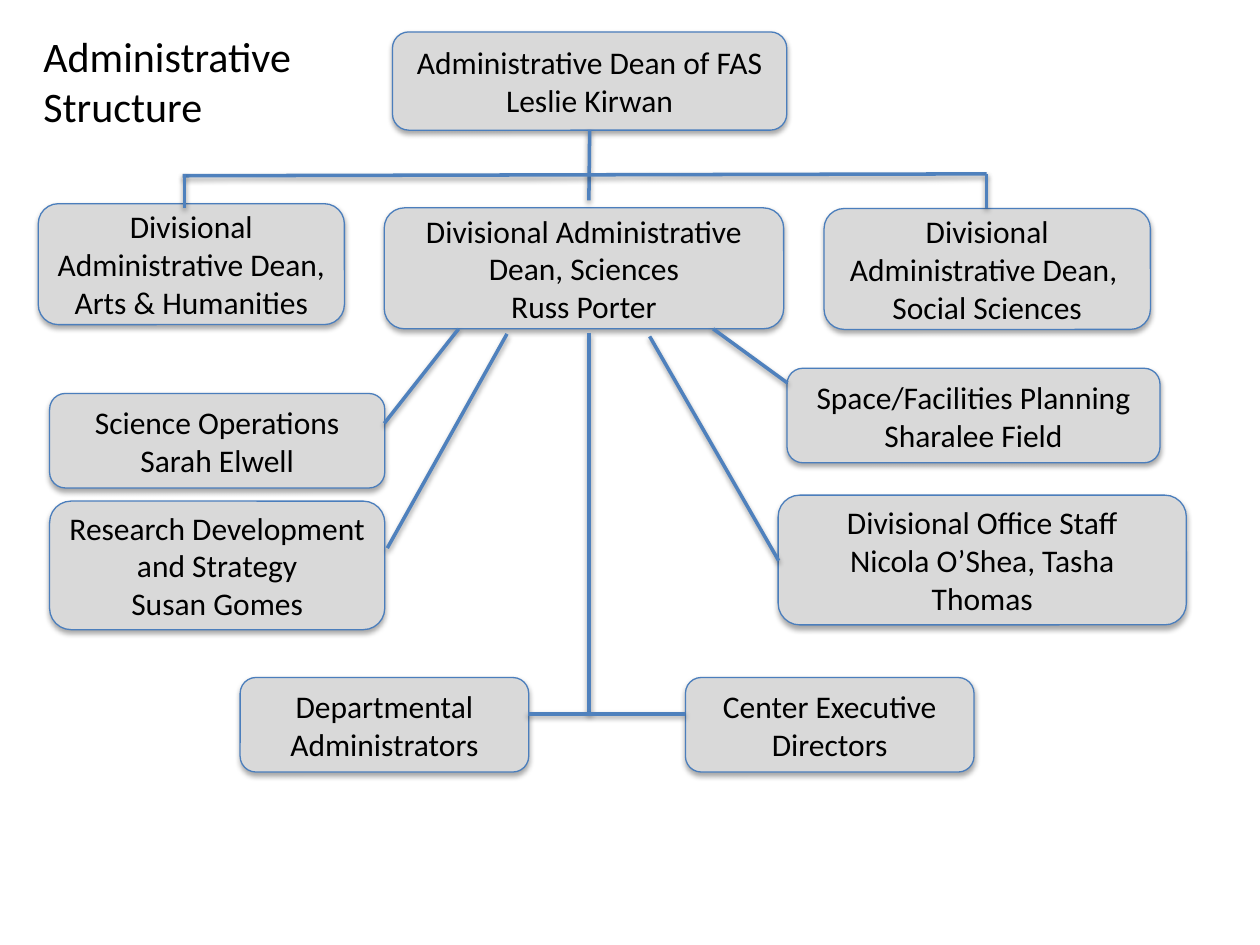
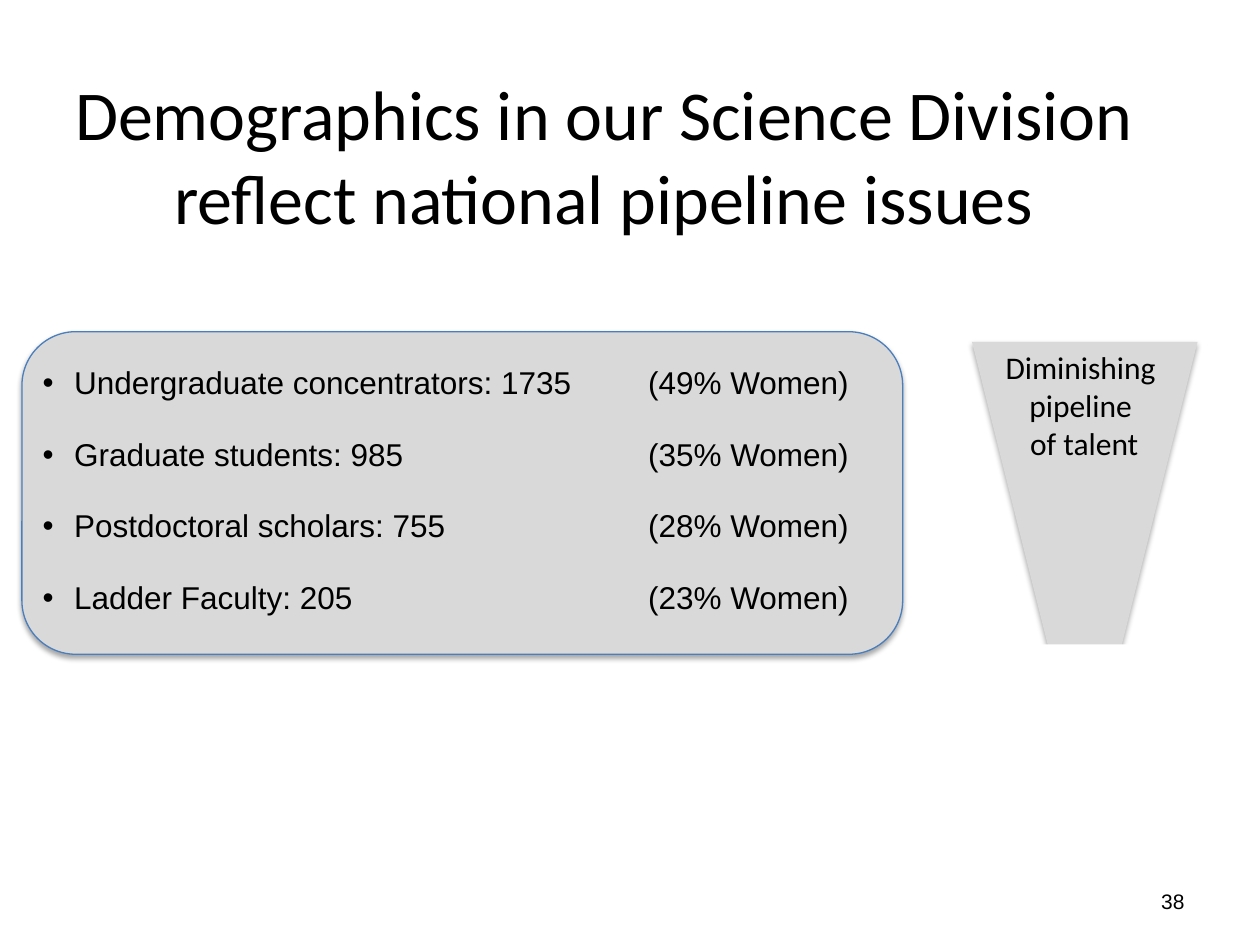
from pptx import Presentation
from pptx.dml.color import RGBColor
from pptx.enum.shapes import MSO_CONNECTOR as Link, MSO_SHAPE as Kind
from pptx.enum.text import MSO_ANCHOR as Anchor, MSO_AUTO_SIZE as Fit, PP_ALIGN as Align
from pptx.oxml import parse_xml
from pptx.oxml.ns import nsdecls
from pptx.util import Inches, Pt

WIDE, HIGH = Inches(10), Inches(7.5)
COLS, ROWS = 100, 75
BLACK = RGBColor(0x00, 0x00, 0x00)
WHITE = RGBColor(0xFF, 0xFF, 0xFF)
GREY = RGBColor(0xD9, 0xD9, 0xD9)
EDGE = RGBColor(0x4B, 0x7E, 0xBC)
BLUE = RGBColor(0x4F, 0x81, 0xBD)
SANS, ARIAL = "Calibri", "Arial"

# Left, top, width, height in grid cells, then the lines of text
POSTS = [
    (31.15, 2.53, 31.3, 7.8, ["Administrative Dean of FAS", "Leslie Kirwan"]),
    (3.04, 16.17, 24.3, 9.6, ["Divisional Administrative Dean, Arts & Humanities"]),
    (30.5, 16.5, 31.7, 9.6, ["Divisional Administrative Dean, Sciences", "Russ Porter"]),
    (65.4, 16.55, 25.9, 9.6, ["Divisional Administrative Dean, ", "Social Sciences"]),
    (3.94, 31.23, 26.6, 7.5, ["Science Operations", "Sarah Elwell"]),
    (3.94, 39.77, 26.6, 10.2, ["Research Development and Strategy", "Susan Gomes"]),
    (62.47, 29.23, 29.6, 7.5, ["Space/Facilities Planning", "Sharalee Field"]),
    (61.76, 39.3, 32.4, 10.3, ["Divisional Office Staff", "Nicola O’Shea, Tasha Thomas"]),
    (19.06, 53.77, 22.9, 7.5, ["Departmental Administrators"]),
    (54.4, 53.77, 22.9, 7.5, ["Center Executive Directors"]),
]
# Start column and row, end column and row
LINKS = [
    (46.8, 10.3, 46.74, 15.9),
    (78.3, 13.8, 14.5, 13.95),
    (14.64, 13.8, 14.64, 16.5),
    (78.3, 13.8, 78.3, 16.5),
    (36.4, 26.1, 30.5, 33.6),
    (40.24, 26.5, 30.74, 43.5),
    (56.6, 26.1, 62.5, 30.4),
    (51.56, 26.7, 61.8, 44.5),
    (46.74, 26.4, 46.74, 56.65),
    (41.9, 56.65, 54.4, 56.65),
]
GROUPS = [
    ("Undergraduate concentrators: 1735", "(49% Women)"),
    ("Graduate students: 985", "(35% Women)"),
    ("Postdoctoral scholars: 755", "(28% Women)"),
    ("Ladder Faculty: 205", "(23% Women)"),
]


def col(n):
    return round(WIDE * n / COLS)


def row(n):
    return round(HIGH * n / ROWS)


def area(left, top, wide, high):
    return col(left), row(top), col(wide), row(high)


def cast(item, alpha, dist):
    """Put a soft shadow straight below the item."""
    item._element.spPr.append(parse_xml(
        f'<a:effectLst {nsdecls("a")}>'
        f'<a:outerShdw blurRad="{Pt(3.1)}" dist="{Pt(dist)}" dir="5400000" rotWithShape="0">'
        f'<a:srgbClr val="{BLACK}"><a:alpha val="{alpha * 1000}"/></a:srgbClr>'
        '</a:outerShdw></a:effectLst>'))


def add_run(para, text, size, face):
    run = para.add_run()
    run.text = text
    run.font.size, run.font.name = Pt(size), face
    run.font.color.rgb = BLACK


def write(frame, lines, size=18, face=SANS, align=Align.CENTER,
          anchor=Anchor.MIDDLE, wrap=True):
    frame.auto_size, frame.word_wrap = Fit.NONE, wrap
    frame.vertical_anchor = anchor
    for i, line in enumerate(lines):
        para = frame.add_paragraph() if i else frame.paragraphs[0]
        para.alignment = align
        add_run(para, line, size, face)


def add_title(slide, place, lines, size, **look):
    title = slide.shapes.title
    title.left, title.top, title.width, title.height = area(*place)
    write(title.text_frame, lines, size, **look)


def add_note(slide, place, lines, **look):
    box = slide.shapes.add_textbox(*area(*place))
    write(box.text_frame, lines, **look)


def add_form(slide, kind, place, fill):
    """Add a filled shape without an outline."""
    form = slide.shapes.add_shape(kind, *area(*place))
    form.fill.solid()
    form.fill.fore_color.rgb = fill
    form.line.fill.background()
    return form


def add_card(slide, place, lines=()):
    card = add_form(slide, Kind.ROUNDED_RECTANGLE, place, GREY)
    card.line.color.rgb, card.line.width = EDGE, Pt(0.75)
    cast(card, 35, 1.8)
    write(card.text_frame, lines)


def add_link(slide, x1, y1, x2, y2):
    link = slide.shapes.add_connector(Link.STRAIGHT, col(x1), row(y1), col(x2), row(y2))
    link.line.color.rgb, link.line.width = BLUE, Pt(2)
    cast(link, 38, 1.6)


def add_funnel(slide, left, top, wide, high, cut):
    """Point a triangle down and trim its tip below the cut."""
    cone = add_form(slide, Kind.ISOSCELES_TRIANGLE, (left, top, wide, high), GREY)
    cone._element.spPr.xfrm.set("flipV", "1")
    cast(cone, 35, 1.8)
    trim = add_form(slide, Kind.RECTANGLE, (left, top + cut, 19.4, 14.7), WHITE)
    trim.shadow.inherit = False


def add_list(slide, place, pairs, stop):
    """List label and share pairs, with the shares at a tab stop."""
    frame = slide.shapes.add_textbox(*area(*place)).text_frame
    frame.word_wrap = True
    for i, (label, share) in enumerate(pairs):
        para = frame.add_paragraph() if i else frame.paragraphs[0]
        props = para._p.get_or_add_pPr()
        props.set("marL", str(col(2.5)))
        props.set("indent", str(-col(2.5)))
        props.append(parse_xml(f'<a:buFont {nsdecls("a")} typeface="{ARIAL}"/>'))
        props.append(parse_xml(f'<a:buChar {nsdecls("a")} char="•"/>'))
        props.append(parse_xml(f'<a:tabLst {nsdecls("a")}>'
                               f'<a:tab pos="{col(stop)}" algn="l"/></a:tabLst>'))
        para.line_spacing = 0.95
        if i:
            para.space_before = Pt(20.4)
        add_run(para, f"{label}\t", 18, ARIAL)
        add_run(para, share, 18, ARIAL)


def draw_staff(slide):
    add_title(slide, (2.44, 1.9, 22.6, 9.1), ["Administrative", "Structure"], 24,
              align=Align.LEFT, anchor=Anchor.TOP, wrap=False)
    for *place, lines in POSTS:
        add_card(slide, place, lines)
    for ends in LINKS:
        add_link(slide, *ends)


def draw_people(slide):
    add_title(slide, (0.83, 6, 94.2, 12.5),
              ["Demographics in our Science Division reflect national pipeline issues"], 40)
    add_card(slide, (1.74, 26.33, 69.9, 25.6))
    add_list(slide, (2.4, 28.55, 69, 22), GROUPS, 48.05)
    add_funnel(slide, 77.14, 27.14, 17.9, 35.8, 24)
    add_note(slide, (78.7, 27.14, 14.7, 10.1), ["Diminishing ", "pipeline ", "of talent"],
             anchor=Anchor.TOP, wrap=False)
    add_note(slide, (71.7, 69.5, 23.3, 4), ["38"], size=12, face=ARIAL, align=Align.RIGHT)


def main():
    deck = Presentation()
    deck.slide_width, deck.slide_height = WIDE, HIGH
    plain = deck.slide_layouts.get_by_name("Title Only")
    for draw in (draw_staff, draw_people):
        draw(deck.slides.add_slide(plain))
    deck.save("out.pptx")


if __name__ == "__main__":
    main()
